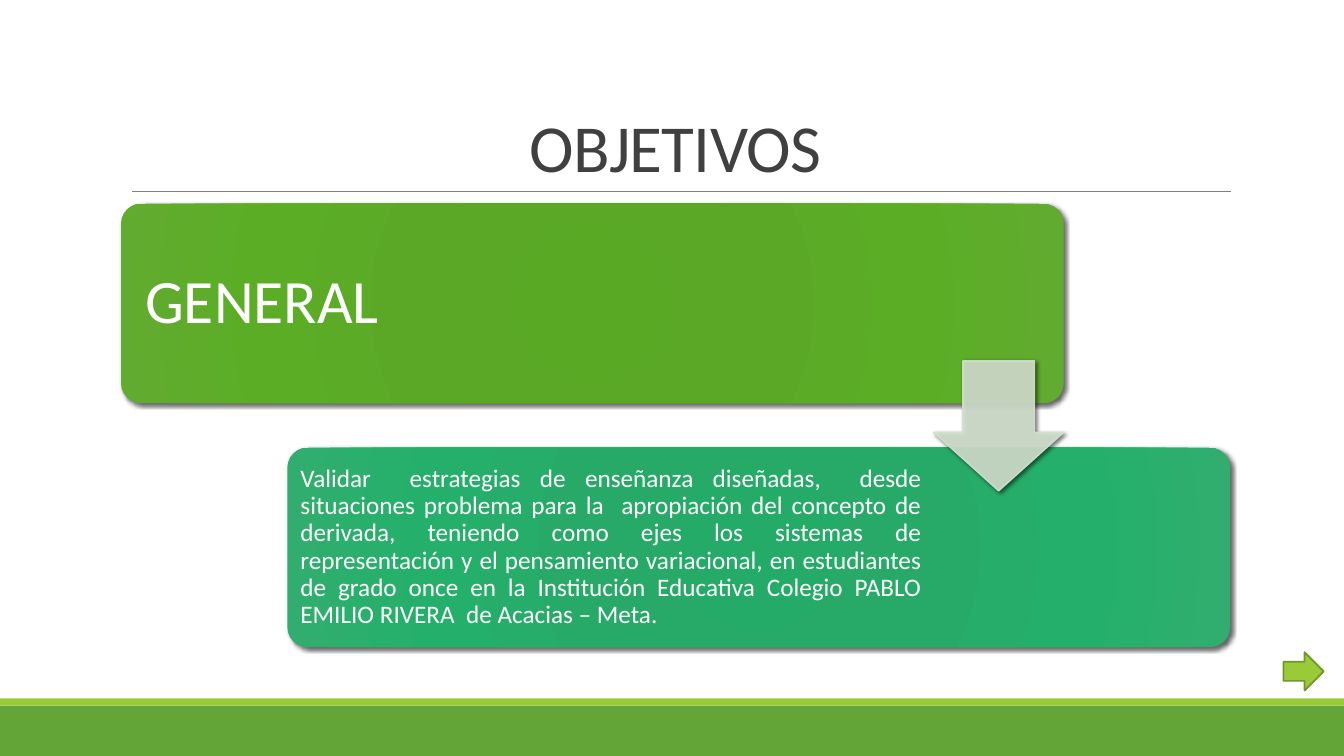
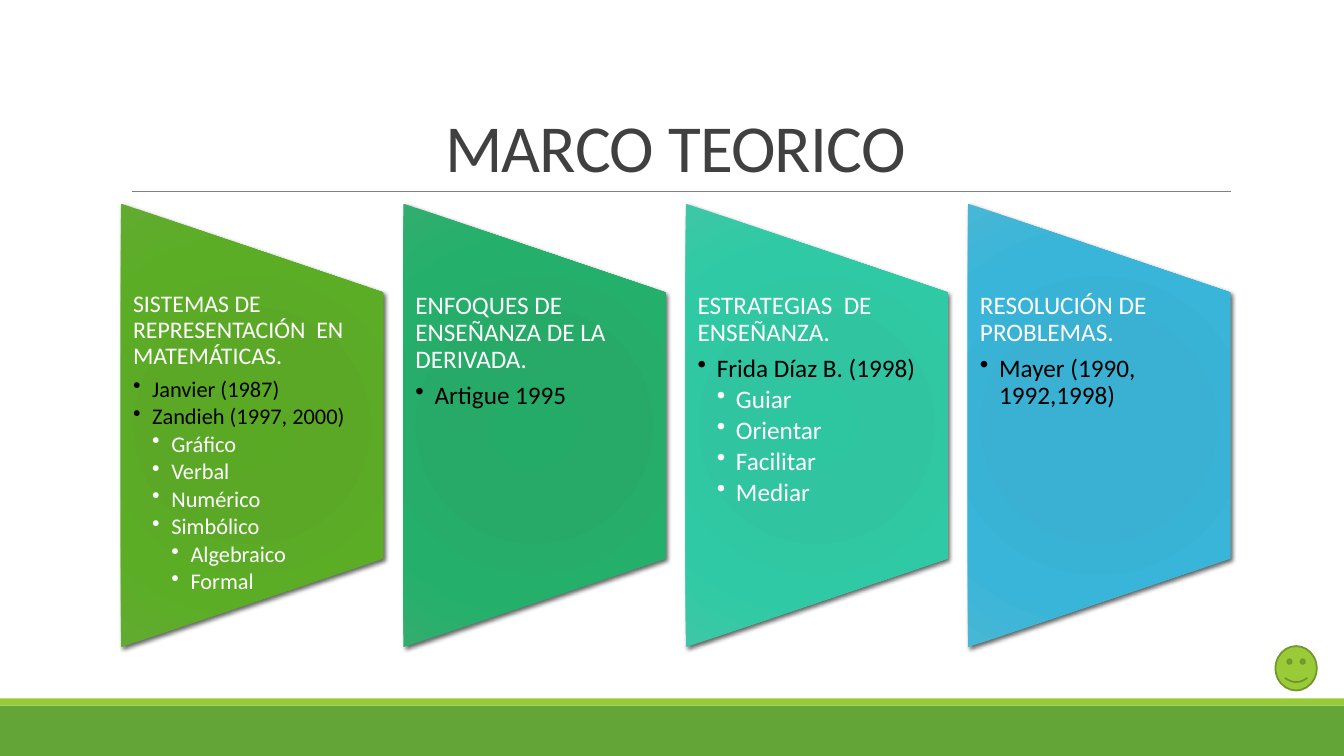
from dataclasses import dataclass

from lxml.etree import SubElement as Sub
from pptx import Presentation
from pptx.dml.color import RGBColor as Rgb
from pptx.enum.shapes import MSO_CONNECTOR as Link, MSO_SHAPE as Kind
from pptx.enum.text import MSO_ANCHOR as Anchor, MSO_AUTO_SIZE as Fit, PP_ALIGN as Align
from pptx.oxml import parse_xml
from pptx.oxml.ns import nsdecls, qn
from pptx.util import Emu, Pt

PX = 9144  # 100 px to the inch
FONT = "Calibri"
HEX = {
    "band": "63A537", "lime": "99CB38", "edge": "719629", "rule": "808080",
    "title": "404040", "white": "FFFFFF", "black": "000000", "pale": "D3E1CE",
}
STOPS = (0, 34, 70, 100)
GRADS = {
    "green": ("59A924", "5BA827", "5BAD25", "62AB31"),
    "jade": ("24AB67", "27AA68", "24B06A", "31AD6F"),
    "teal": ("2EC5A1", "31C4A1", "2FCAA5", "3EC7A6"),
    "blue": ("37B1D3", "3AB1D2", "38B5D8", "48B7D5"),
}


@dataclass(frozen=True)
class Box:
    x: int
    y: int
    w: int
    h: int

    def emu(self) -> tuple:
        return tuple(Emu(n * PX) for n in (self.x, self.y, self.w, self.h))


@dataclass(frozen=True)
class Para:
    text: str
    level: int = 0


@dataclass(frozen=True)
class Panel:
    head: str
    grad: str
    items: tuple
    size: int = 18
    small: int = 18


def tint(name: str) -> Rgb:
    return Rgb.from_string(HEX[name])


# Text
def write(shape, paras: list, *, size: int, small: int = 0, color: str = "white",
          align=Align.LEFT, anchor=Anchor.TOP, inset: tuple = (10, 5),
          lead: float = 0.9, after: float = 0.35, track: int = 0) -> None:
    frame = shape.text_frame
    frame.word_wrap, frame.auto_size = True, Fit.NONE
    frame.vertical_anchor = anchor
    frame.margin_left = frame.margin_right = Emu(inset[0] * PX)
    frame.margin_top = frame.margin_bottom = Emu(inset[1] * PX)
    for i, item in enumerate(paras):
        para = frame.paragraphs[0] if i == 0 else frame.add_paragraph()
        pts, gap, shade = size, after, color
        if item.level:
            pts, gap = small, 0.15
            shade = "black" if item.level == 1 else "white"
            para.level = item.level
            props = para._p.get_or_add_pPr()
            props.set("marL", str(item.level * 19 * PX))
            props.set("indent", str(-19 * PX))
            Sub(props, qn("a:buChar")).set("char", "•")
        para.alignment, para.line_spacing = align, lead
        para.space_before, para.space_after = Pt(0), Pt(pts * gap)
        run = para.add_run()
        run.text = item.text
        run.font.name, run.font.size = FONT, Pt(pts)
        run.font.color.rgb = tint(shade)
        if track:
            run._r.get_or_add_rPr().set("spc", str(track))


def label(slide, box: Box, paras: list, **style) -> None:
    write(slide.shapes.add_textbox(*box.emu()), paras, **style)


# Shapes
def draw(slide, kind, box: Box, fill: str = "", line: str = "",
         width: float = 1.25, adjust: tuple = ()):
    shape = slide.shapes.add_shape(kind, *box.emu())
    shape.shadow.inherit = False
    for i, value in enumerate(adjust):
        shape.adjustments[i] = value
    if fill:
        shape.fill.solid()
        shape.fill.fore_color.rgb = tint(fill)
    if line:
        shape.line.color.rgb = tint(line)
        shape.line.width = Pt(width)
    else:
        shape.line.fill.background()
    return shape


def shade(shape) -> None:
    effects = shape._element.spPr.find(qn("a:effectLst"))
    effects.append(parse_xml(
        f'<a:outerShdw {nsdecls("a")} blurRad="{Pt(3)}" dist="{Pt(2)}" dir="2700000" '
        f'rotWithShape="0"><a:srgbClr val="{HEX["black"]}"><a:alpha val="60000"/>'
        '</a:srgbClr></a:outerShdw>'))


def blend(shape, name: str) -> None:
    stops = "".join(f'<a:gs pos="{at * 1000}"><a:srgbClr val="{code}"/></a:gs>'
                    for at, code in zip(STOPS, GRADS[name]))
    shape._element.spPr.find(qn("a:prstGeom")).addnext(parse_xml(
        f'<a:gradFill {nsdecls("a")} rotWithShape="1"><a:gsLst>{stops}</a:gsLst>'
        '<a:path path="circle"><a:fillToRect l="100000" t="100000" r="100000" b="100000"/>'
        '</a:path></a:gradFill>'))
    shade(shape)


# Shared frame: bands, rule and title
def start(deck, title: str):
    slide = deck.slides.add_slide(deck.slide_layouts[5])
    draw(slide, Kind.RECTANGLE, Box(0, 700, 1333, 50), "band")
    draw(slide, Kind.RECTANGLE, Box(0, 693, 1333, 7), "lime")
    rule = slide.shapes.add_connector(
        Link.STRAIGHT, *(Emu(n * PX) for n in (131, 190, 1221, 190)))
    rule.line.color.rgb, rule.line.width = tint("rule"), Pt(0.5)
    Sub(rule._element.spPr, qn("a:effectLst"))
    head = slide.shapes.title
    head.left, head.top, head.width, head.height = Box(120, 31, 1100, 159).emu()
    write(head, [Para(title)], size=48, color="title", align=Align.CENTER,
          anchor=Anchor.BOTTOM, lead=0.85, after=0, track=-50)
    return slide


GOAL = ("Validar  estrategias de enseñanza diseñadas,  desde situaciones problema para la  "
        "apropiación del concepto de derivada, teniendo como ejes los sistemas de "
        "representación y el pensamiento variacional, en estudiantes de grado once en la "
        "Institución Educativa Colegio PABLO EMILIO RIVERA  de Acacias – Meta.")

PANELS = (
    Panel("SISTEMAS DE REPRESENTACIÓN  EN MATEMÁTICAS.", "green", (
        Para("Janvier (1987)", 1), Para("Zandieh (1997, 2000)", 1),
        Para("Gráfico", 2), Para("Verbal", 2), Para("Numérico", 2),
        Para("Simbólico", 2), Para("Algebraico", 3), Para("Formal", 3)), 17, 16),
    Panel("ENFOQUES DE ENSEÑANZA DE LA DERIVADA.", "jade", (Para("Artigue 1995", 1),)),
    Panel("ESTRATEGIAS  DE ENSEÑANZA.", "teal", (
        Para("Frida Díaz B. (1998)", 1), Para("Guiar", 2), Para("Orientar", 2),
        Para("Facilitar", 2), Para("Mediar", 2))),
    Panel("RESOLUCIÓN DE PROBLEMAS.", "blue", (Para("Mayer (1990, 1992,1998)", 1),)),
)


def goals(deck) -> None:
    slide = start(deck, "OBJETIVOS")
    # Two stepped cards
    for x, y, grad, wide, text, style in (
        (120, 202, "green", 730, "GENERAL", dict(size=44, inset=(18, 18))),
        (285, 444, "jade", 630, GOAL, dict(size=18, inset=(7, 7), align=Align.JUSTIFY)),
    ):
        card = draw(slide, Kind.ROUNDED_RECTANGLE, Box(x, y, 935, 198), adjust=(0.1,))
        blend(card, grad)
        label(slide, Box(x + 6, y + 6, wide, 186), [Para(text)],
              anchor=Anchor.MIDDLE, **style)
    # Arrow between the cards
    arrow = draw(slide, Kind.DOWN_ARROW, Box(926, 358, 129, 129), "pale", "pale", 1,
                 (0.55, 0.45))
    for color in arrow._element.spPr.iter(qn("a:srgbClr")):
        Sub(color, qn("a:alpha")).set("val", "90000")
    shade(arrow)
    draw(slide, Kind.RIGHT_ARROW, Box(1273, 647, 40, 38), "lime", "edge")


def theory(deck) -> None:
    slide = start(deck, "MARCO TEORICO")
    # Four panels, each a trapezoid turned on its side
    wide, tall, step = 260, 440, 280
    for i, panel in enumerate(PANELS):
        x = 120 + i * step
        flap = draw(slide, Kind.FLOWCHART_MANUAL_OPERATION,
                    Box(x - (tall - wide) // 2, 292, tall, wide))
        flap.rotation = 270
        blend(flap, panel.grad)
        label(slide, Box(x, 290, wide, 264), [Para(panel.head), *panel.items],
              size=panel.size, small=panel.small, inset=(12, 0))
    draw(slide, Kind.SMILEY_FACE, Box(1265, 641, 41, 44), "lime", "edge")


def main() -> None:
    deck = Presentation()
    deck.slide_width, deck.slide_height = Emu(1333 * PX), Emu(750 * PX)
    goals(deck)
    theory(deck)
    deck.save("out.pptx")


if __name__ == "__main__":
    main()
